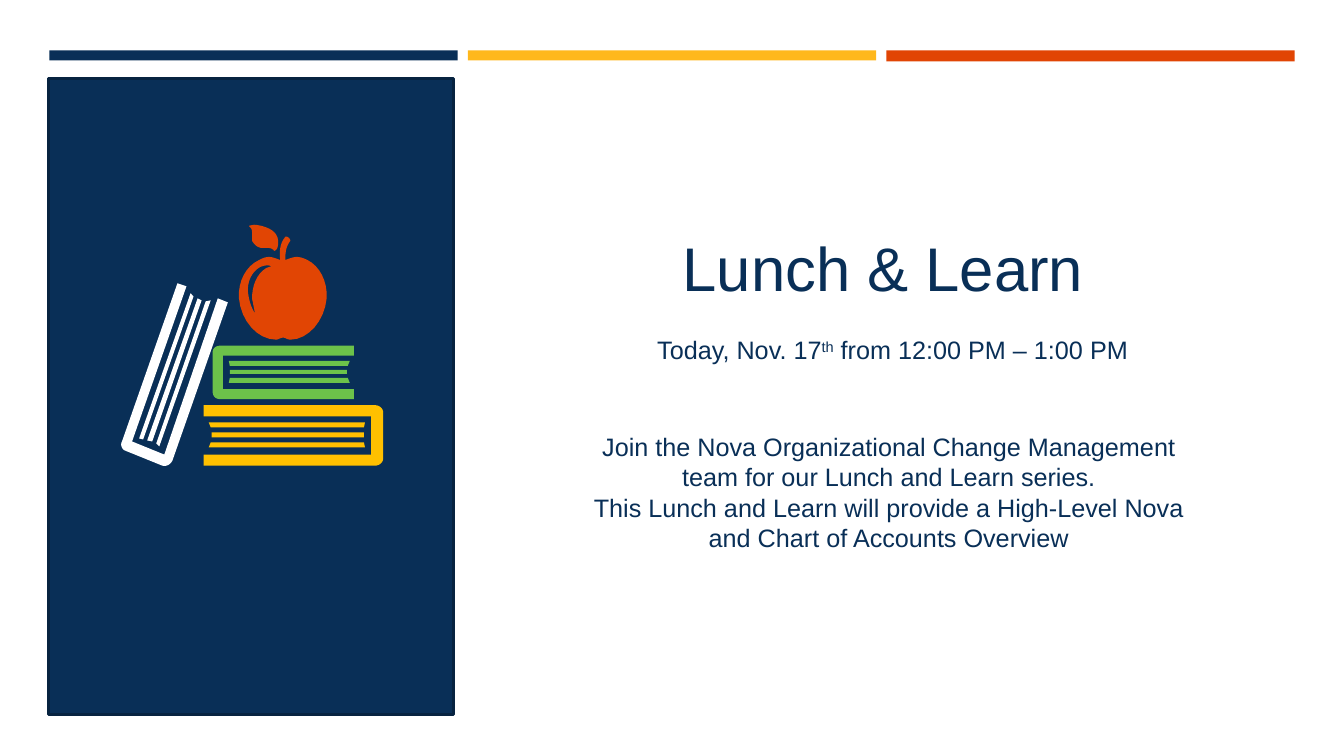
from pptx import Presentation
from pptx import util as u
from pptx.dml.color import RGBColor
from pptx.enum import shapes, text

COLORS = {"navy": "092F57", "edge": "072340", "gold": "FFB81C", "orange": "E14504",
          "green": "6CC24A", "yellow": "FFC000", "white": "FFFFFF"}
CURVE_STEPS = 8


def paint(shape, color):
    shape.shadow.inherit = False
    shape.fill.solid()
    shape.fill.fore_color.rgb = RGBColor.from_string(COLORS[color])
    shape.line.fill.background()


def trace(outline):
    points = [outline[0]]
    for step in outline[1:]:
        if len(step) == 2:
            points.append(step)
            continue
        corners = [points[-1], step[:2], step[2:4], step[4:]]
        for i in range(1, CURVE_STEPS + 1):
            t = i / CURVE_STEPS
            weights = ((1 - t) ** 3, 3 * t * (1 - t) ** 2, 3 * t * t * (1 - t), t ** 3)
            points.append(tuple(sum(w * c[axis] for w, c in zip(weights, corners))
                                for axis in (0, 1)))
    return [(u.Inches(x), u.Inches(y)) for x, y in points]


deck = Presentation()
deck.slide_width, deck.slide_height = u.Inches(13.33), u.Inches(7.5)
page = deck.slides.add_slide(deck.slide_layouts[5])

for column, (color, height) in enumerate([("navy", 0.1), ("gold", 0.1), ("orange", 0.11)]):
    bar = page.shapes.add_shape(shapes.MSO_SHAPE.RECTANGLE, u.Inches(0.49 + 4.15 * column),
                                u.Inches(0.5), u.Inches(4.05), u.Inches(height))
    paint(bar, color)

panel = page.shapes.add_shape(shapes.MSO_SHAPE.RECTANGLE, u.Inches(0.48), u.Inches(0.78),
                              u.Inches(4.02), u.Inches(6.31))
paint(panel, "navy")
panel.line.color.rgb = RGBColor.from_string(COLORS["edge"])
panel.line.width = u.Pt(1.75)

green_book = [
    [(2.21, 3.53), (2.21, 3.86), (3.51, 3.86), (3.51, 3.96), (2.18, 3.96),
     (2.14, 3.96, 2.11, 3.93, 2.11, 3.89), (2.11, 3.49),
     (2.11, 3.46, 2.14, 3.43, 2.18, 3.43), (3.51, 3.43), (3.51, 3.53)],
    [(3.47, 3.58), (2.27, 3.58), (2.28, 3.63), (3.45, 3.63)],
    [(3.44, 3.67), (2.28, 3.67), (2.28, 3.71), (3.44, 3.71)],
    [(3.45, 3.75), (2.28, 3.75), (2.27, 3.8), (3.47, 3.8)],
]
apple = [
    [(3.05, 2.58), (3.17, 2.64, 3.25, 2.79, 3.24, 2.96), (3.22, 3.18, 3.06, 3.37, 2.88, 3.37),
     (2.85, 3.37, 2.83, 3.35, 2.81, 3.35), (2.78, 3.35, 2.76, 3.37, 2.74, 3.37),
     (2.55, 3.37, 2.39, 3.18, 2.37, 2.96), (2.36, 2.79, 2.44, 2.64, 2.57, 2.58),
     (2.66, 2.53, 2.7, 2.55, 2.78, 2.58), (2.77, 2.52, 2.77, 2.42, 2.83, 2.35),
     (2.84, 2.34, 2.88, 2.36, 2.88, 2.39), (2.83, 2.45, 2.83, 2.53, 2.83, 2.58),
     (2.91, 2.55, 2.95, 2.53, 3.05, 2.58)],
    [(2.69, 2.64), (2.66, 2.63, 2.63, 2.63, 2.58, 2.65), (2.49, 2.7, 2.45, 2.81, 2.46, 2.9),
     (2.47, 2.98, 2.49, 3.05, 2.53, 3.11), (2.52, 3.06, 2.51, 3.01, 2.5, 2.96),
     (2.5, 2.85, 2.54, 2.72, 2.64, 2.66), (2.66, 2.65, 2.68, 2.65, 2.69, 2.64)],
    [(2.59, 2.46), (2.54, 2.45, 2.52, 2.42, 2.5, 2.39), (2.5, 2.35, 2.5, 2.33, 2.5, 2.3),
     (2.5, 2.26, 2.47, 2.25, 2.47, 2.24), (2.52, 2.23),
     (2.55, 2.23, 2.58, 2.24, 2.59, 2.24), (2.66, 2.26, 2.75, 2.29, 2.76, 2.39),
     (2.76, 2.42, 2.76, 2.48, 2.72, 2.49), (2.7, 2.45, 2.63, 2.46, 2.59, 2.46)],
]
yellow_book = [
    [(3.68, 4.13), (3.68, 4.51), (2.02, 4.51), (2.02, 4.62), (3.72, 4.62),
     (3.76, 4.62, 3.8, 4.59, 3.8, 4.55), (3.8, 4.09),
     (3.8, 4.05, 3.76, 4.02, 3.72, 4.02), (2.02, 4.02), (2.02, 4.13)],
    [(2.07, 4.19), (3.62, 4.19), (3.61, 4.24), (2.09, 4.24)],
    [(2.1, 4.29), (3.61, 4.29), (3.61, 4.34), (2.1, 4.34)],
    [(2.09, 4.39), (3.61, 4.39), (3.62, 4.44), (2.07, 4.44)],
]
white_book = [
    [(1.31, 4.38), (1.63, 4.51), (2.16, 2.96), (2.26, 3), (1.71, 4.57),
     (1.69, 4.61, 1.65, 4.63, 1.61, 4.62), (1.24, 4.47),
     (1.21, 4.46, 1.19, 4.41, 1.21, 4.38), (1.76, 2.81), (1.85, 2.84)],
    [(1.89, 2.91), (1.38, 4.35), (1.42, 4.36), (1.92, 2.94)],
    [(1.96, 2.96), (1.46, 4.37), (1.51, 4.38), (2, 2.98)],
    [(2.04, 2.99), (1.55, 4.4), (1.58, 4.43), (2.09, 2.98)],
]

icon = page.shapes.add_group_shape()
for color, outlines in [("green", green_book), ("orange", apple),
                        ("yellow", yellow_book), ("white", white_book)]:
    first, *others = [trace(outline) for outline in outlines]
    builder = icon.shapes.build_freeform(*first[0], scale=1.0)
    builder.add_line_segments(first[1:], close=True)
    for points in others:
        builder.move_to(*points[0])
        builder.add_line_segments(points[1:], close=True)
    paint(builder.convert_to_shape(), color)

left, center = text.PP_ALIGN.LEFT, text.PP_ALIGN.CENTER
title = page.shapes.title
invitation = page.shapes.add_textbox(0, 0, 0, 0)
schedule = page.shapes.add_textbox(0, 0, 0, 0)
blocks = [
    (title, (6.67, 2.23, 4.31, 0.84), 44, left, [["Lunch & Learn"]]),
    (invitation, (5.78, 4.23, 6.07, 1.31), 18, center, [
        ["Join the Nova Organizational Change Management team for our Lunch and Learn series."],
        ["This Lunch and Learn will provide a High-Level Nova and Chart of Accounts Overview"]]),
    (schedule, (6.42, 3.27, 5.3, 0.4), 18, left,
     [["Today, Nov. 17", "th", " from 12:00 PM – 1:00 PM"]]),
]
for box, place, size, align, lines in blocks:
    for name, value in zip(("left", "top", "width", "height"), place):
        setattr(box, name, u.Inches(value))
    frame = box.text_frame
    frame_format = {"word_wrap": True, "auto_size": text.MSO_AUTO_SIZE.NONE,
                    "vertical_anchor": text.MSO_ANCHOR.TOP}
    for name, value in frame_format.items():
        setattr(frame, name, value)
    for number, line in enumerate(lines):
        para = frame.add_paragraph() if number else frame.paragraphs[0]
        para.alignment = align
        for words in line:
            span = para.add_run()
            span.text = words
            for name, value in {"name": "Arial", "size": u.Pt(size)}.items():
                setattr(span.font, name, value)
            span.font.color.rgb = RGBColor.from_string(COLORS["navy"])
            if words == "th":
                span._r.get_or_add_rPr().set("baseline", "30000")

deck.save("out.pptx")
